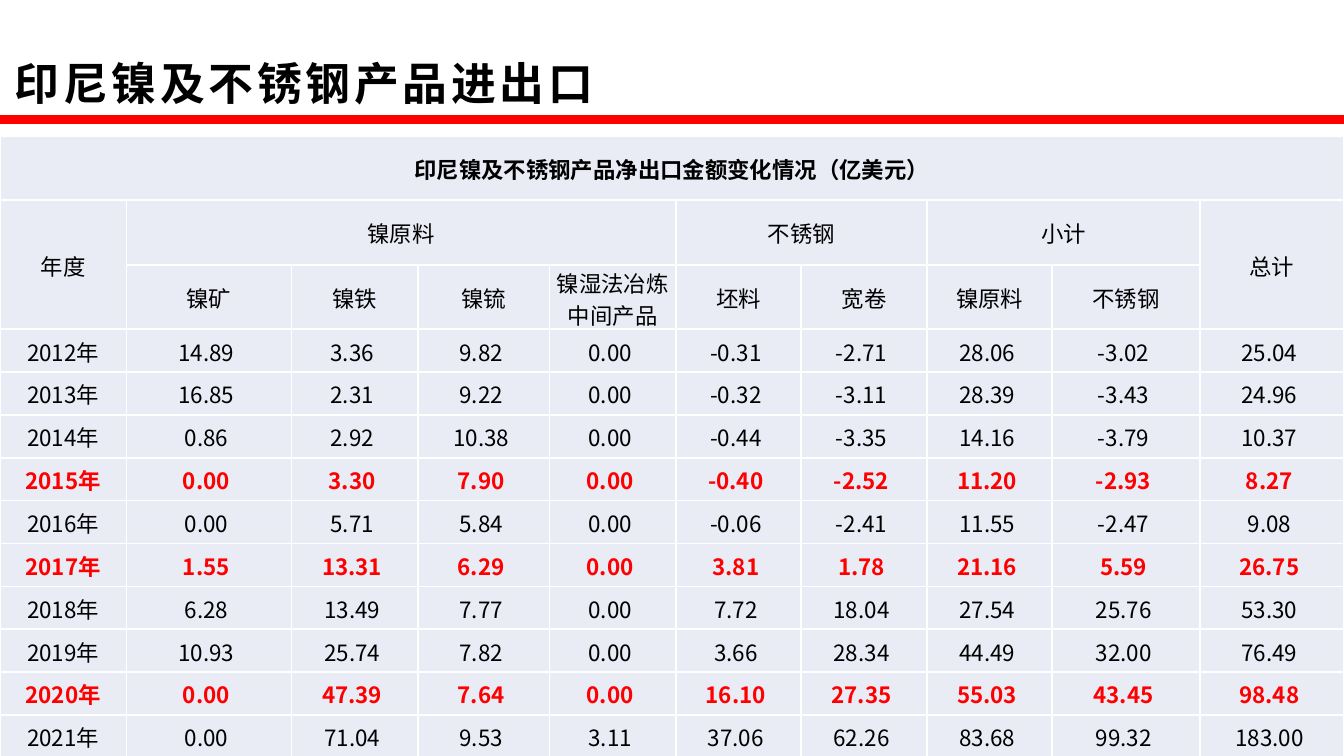
from lxml.etree import SubElement
from pptx import Presentation
from pptx.dml.color import RGBColor
from pptx.enum.shapes import MSO_CONNECTOR
from pptx.enum.text import MSO_ANCHOR, PP_ALIGN
from pptx.oxml.ns import qn
from pptx.util import Inches, Pt

FONT = "Noto Sans CJK SC"
BLACK, RED, WHITE, PALE = "000000", "FF0000", "FFFFFF", "E9EBF5"

PAGE_WIDTH = 10
PAGE_HEIGHT = PAGE_WIDTH * 9 / 16
COLUMN_WIDTHS = [0.94, 1.23, 0.94, 0.98, 0.94, 0.93, 0.94, 0.93, 1.1, 1.07]
TABLE_TOP, TABLE_HEIGHT = 1.01, 4.63
HEADER_ROWS, HEADER_HEIGHT = 3, 0.48

# Header cells: row, column, row span, column span, text
HEADERS = [
    (0, 0, 1, 10, "印尼镍及不锈钢产品净出口金额变化情况（亿美元）"),
    (1, 0, 2, 1, "年度"),
    (1, 1, 1, 4, "镍原料"),
    (1, 5, 1, 2, "不锈钢"),
    (1, 7, 1, 2, "小计"),
    (1, 9, 2, 1, "总计"),
]
PRODUCTS = ["镍矿", "镍铁", "镍锍", "镍湿法冶炼中间产品", "坯料", "宽卷", "镍原料", "不锈钢"]

FIRST_YEAR = 2012
HIGHLIGHTED_YEARS = {2015, 2017, 2020}
NET_EXPORTS = [
    [14.89, 3.36, 9.82, 0, -0.31, -2.71, 28.06, -3.02, 25.04],
    [16.85, 2.31, 9.22, 0, -0.32, -3.11, 28.39, -3.43, 24.96],
    [0.86, 2.92, 10.38, 0, -0.44, -3.35, 14.16, -3.79, 10.37],
    [0, 3.30, 7.90, 0, -0.40, -2.52, 11.20, -2.93, 8.27],
    [0, 5.71, 5.84, 0, -0.06, -2.41, 11.55, -2.47, 9.08],
    [1.55, 13.31, 6.29, 0, 3.81, 1.78, 21.16, 5.59, 26.75],
    [6.28, 13.49, 7.77, 0, 7.72, 18.04, 27.54, 25.76, 53.30],
    [10.93, 25.74, 7.82, 0, 3.66, 28.34, 44.49, 32.00, 76.49],
    [0, 47.39, 7.64, 0, 16.10, 27.35, 55.03, 43.45, 98.48],
    [0, 71.04, 9.53, 3.11, 37.06, 62.26, 83.68, 99.32, 183.00],
]


def color(value):
    return RGBColor.from_string(value)


def set_values(target, values):
    for name, value in values.items():
        setattr(target, name, value)


def write(para, text, size, bold=False, ink=BLACK, spacing=None):
    span = para.add_run()
    span.text = text
    set_values(span.font, {"name": FONT, "size": Pt(size), "bold": bold})
    span.font.color.rgb = color(ink)
    properties = span.font._element
    SubElement(properties, qn("a:ea"), typeface=FONT)
    if spacing:
        properties.set("spc", str(spacing * 100))


def add_rule(page, top, width, ink):
    rule = page.shapes.add_connector(
        MSO_CONNECTOR.STRAIGHT, 0, Inches(top), Inches(PAGE_WIDTH), Inches(top))
    rule.line.width = Pt(width)
    rule.line.color.rgb = color(ink)
    SubElement(rule._element.spPr, qn("a:effectLst"))


def add_title(page, text):
    box = page.shapes.add_textbox(0, Inches(0.35), Inches(PAGE_WIDTH), Inches(0.53))
    set_values(box.text_frame, {
        "word_wrap": True, "vertical_anchor": MSO_ANCHOR.MIDDLE,
        "margin_left": Inches(0.11), "margin_right": Inches(0.08),
        "margin_top": Inches(0.04), "margin_bottom": Inches(0.04)})
    write(box.text_frame.paragraphs[0], text, 24, bold=True, spacing=2)


def style_cell(cell):
    set_values(cell, {
        "vertical_anchor": MSO_ANCHOR.MIDDLE,
        "margin_left": Inches(0.01), "margin_right": Inches(0.01),
        "margin_top": Inches(0.01), "margin_bottom": 0})
    # Borders come before the fill in the cell properties
    properties = cell._tc.get_or_add_tcPr()
    for side in ("lnL", "lnR", "lnT", "lnB"):
        border = SubElement(properties, qn(f"a:{side}"), w=str(Pt(1)))
        fill = SubElement(border, qn("a:solidFill"))
        SubElement(fill, qn("a:srgbClr"), val=WHITE)
    cell.fill.solid()
    cell.fill.fore_color.rgb = color(PALE)


def fill_cell(cell, text, **style):
    para = cell.text_frame.paragraphs[0]
    para.alignment = PP_ALIGN.CENTER
    write(para, text, 12, **style)


def add_grid(page):
    row_count = HEADER_ROWS + len(NET_EXPORTS)
    table = page.shapes.add_table(
        row_count, len(COLUMN_WIDTHS), 0, Inches(TABLE_TOP),
        Inches(PAGE_WIDTH), Inches(TABLE_HEIGHT)).table
    set_values(table, {"first_row": False, "horz_banding": False})
    for column, width in zip(table.columns, COLUMN_WIDTHS):
        column.width = Inches(width)
    body_height = (TABLE_HEIGHT - HEADER_ROWS * HEADER_HEIGHT) / len(NET_EXPORTS)
    for index, row in enumerate(table.rows):
        row.height = Inches(HEADER_HEIGHT if index < HEADER_ROWS else body_height)
    for cell in table.iter_cells():
        style_cell(cell)
    return table


def fill_headers(table):
    for row, column, row_span, column_span, text in HEADERS:
        cell = table.cell(row, column)
        cell.merge(table.cell(row + row_span - 1, column + column_span - 1))
        fill_cell(cell, text, bold=row == 0)
    for column, product in enumerate(PRODUCTS, start=1):
        fill_cell(table.cell(2, column), product)


def fill_years(table):
    for index, amounts in enumerate(NET_EXPORTS):
        year = FIRST_YEAR + index
        marked = year in HIGHLIGHTED_YEARS
        texts = [f"{year}年"] + [f"{amount:.2f} " for amount in amounts]
        for column, text in enumerate(texts):
            fill_cell(table.cell(HEADER_ROWS + index, column), text,
                      bold=marked, ink=RED if marked else BLACK)


def main():
    deck = Presentation()
    set_values(deck, {"slide_width": Inches(PAGE_WIDTH),
                      "slide_height": Inches(PAGE_HEIGHT)})
    page = deck.slides.add_slide(deck.slide_layouts[6])

    # Heading
    add_rule(page, 0.89, 5, RED)
    add_title(page, "印尼镍及不锈钢产品进出口")

    # Net export table
    table = add_grid(page)
    fill_headers(table)
    fill_years(table)

    deck.save("out.pptx")


if __name__ == "__main__":
    main()
